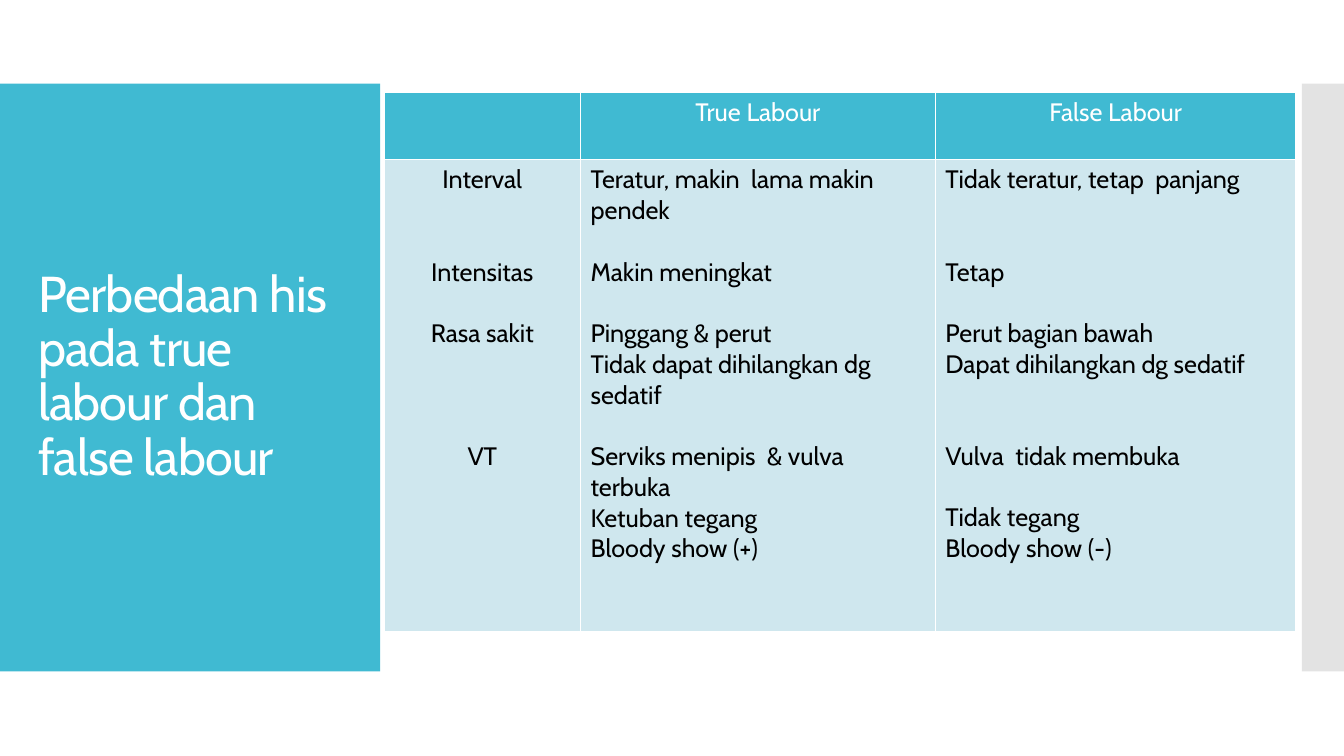
from lxml import etree
from pptx import Presentation
from pptx.dml.color import RGBColor
from pptx.enum.shapes import MSO_SHAPE
from pptx.enum.text import MSO_ANCHOR, MSO_AUTO_SIZE, PP_ALIGN
from pptx.oxml.ns import qn
from pptx.util import Cm, Pt

RECT = MSO_SHAPE.RECTANGLE
MIDDLE = MSO_ANCHOR.MIDDLE
FIXED = MSO_AUTO_SIZE.NONE
LEFT, CENTER = PP_ALIGN.LEFT, PP_ALIGN.CENTER

FONT = "Cabin"
TEAL, PALE, GREY = "40BAD2", "CFE7EE", "C8C8C8"
WHITE, BLACK = "FFFFFF", "000000"
LINE = 21.9

TITLE = "Perbedaan his pada true labour dan false labour"
HEADS = ["", "True Labour", "False Labour"]
BODY = [
    [("Interval", 0), ("Intensitas", 2), ("Rasa sakit", 1), ("VT", 3)],
    [("Teratur, makin  lama makin pendek", 0), ("Makin meningkat", 1),
     ("Pinggang & perut", 1), ("Tidak dapat dihilangkan dg sedatif", 0),
     ("Serviks menipis  & vulva terbuka", 1), ("Ketuban tegang", 0),
     ("Bloody show (+)", 0)],
    [("Tidak teratur, tetap  panjang", 0), ("Tetap", 2),
     ("Perut bagian bawah", 1), ("Dapat dihilangkan dg sedatif", 0),
     ("Vulva  tidak membuka", 2), ("Tidak tegang", 1),
     ("Bloody show (-)", 0)],
]
WIDTHS = [4.95, 8.94, 9.09]
HEIGHTS = [1.7, 11.89]
BANDS = [(0, 9.58, TEAL), (32.81, 1.06, GREY)]


def paint(fill, shade):
    fill.solid()
    fill.fore_color.rgb = RGBColor.from_string(shade)


def style(para, size, shade, align):
    para.alignment = align
    for run in para.runs:
        run.font.name = FONT
        run.font.size = Pt(size)
        run.font.color.rgb = RGBColor.from_string(shade)


def write(cell, lines, shade, back, align):
    paint(cell.fill, back)
    frame = cell.text_frame
    frame.text = "\n".join(text for text, gap in lines)
    for para, (text, gap) in zip(frame.paragraphs, lines):
        para.space_before = Pt(gap * LINE)
        style(para, 18, shade, align)


def edge(props):
    for i, side in enumerate(("lnL", "lnR", "lnT", "lnB")):
        line = etree.Element(qn("a:" + side), w=str(Pt(1)))
        fill = etree.SubElement(line, qn("a:solidFill"))
        etree.SubElement(fill, qn("a:srgbClr"), val=WHITE)
        props.insert(i, line)


def main():
    deck = Presentation()
    deck.slide_width, deck.slide_height = Cm(33.87), Cm(19.05)
    slide = deck.slides.add_slide(deck.slide_layouts[5])
    title = slide.shapes.title

    for left, width, shade in BANDS:
        band = slide.shapes.add_shape(RECT, Cm(left), Cm(2.11), Cm(width), Cm(14.81))
        band.shadow.inherit = False
        band.line.fill.background()
        paint(band.fill, shade)
        if shade == GREY:
            tint = next(band.element.iter(qn("a:srgbClr")))
            etree.SubElement(tint, qn("a:alpha"), val="50000")
        title.element.addprevious(band.element)

    title.left, title.top = Cm(0.71), Cm(3.12)
    title.width, title.height = Cm(8.18), Cm(12.78)
    frame = title.text_frame
    frame.text = TITLE
    frame.word_wrap = True
    frame.auto_size = FIXED
    frame.vertical_anchor = MIDDLE
    head = frame.paragraphs[0]
    head.line_spacing = 0.9
    style(head, 36, WHITE, LEFT)
    for props in title.element.iter(qn("a:rPr")):
        props.set("spc", "-60")

    grid = slide.shapes.add_table(2, 3, Cm(9.68), Cm(2.32),
                                  Cm(sum(WIDTHS)), Cm(sum(HEIGHTS)))
    table = grid.table
    for row, height in zip(table.rows, HEIGHTS):
        row.height = Cm(height)
    for i, width in enumerate(WIDTHS):
        table.columns[i].width = Cm(width)
        write(table.cell(0, i), [(HEADS[i], 0)], WHITE, TEAL, CENTER)
        write(table.cell(1, i), BODY[i], BLACK, PALE, LEFT if i else CENTER)
    for props in grid.element.iter(qn("a:tcPr")):
        edge(props)

    deck.save("out.pptx")


if __name__ == "__main__":
    main()
